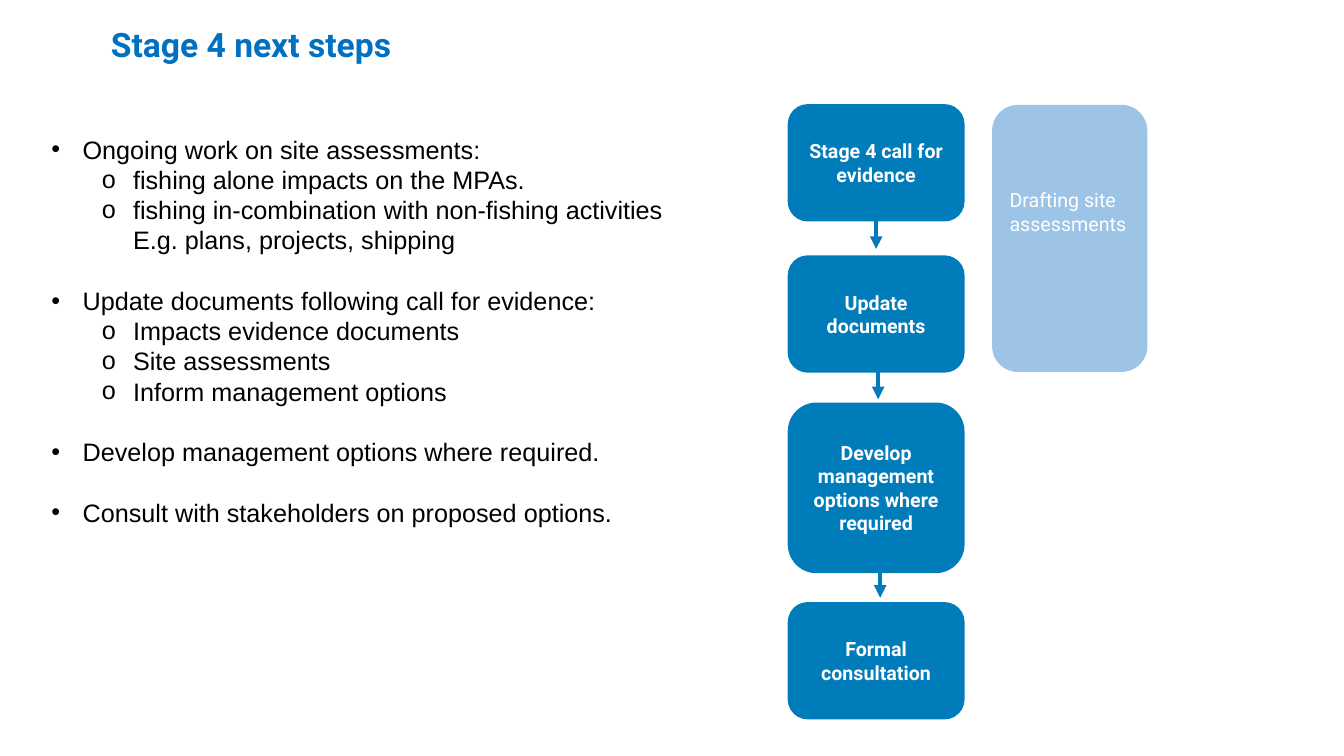
"""Build the slide on the next steps of Stage 4."""
from lxml import etree
from pptx import Presentation
from pptx import util as u
from pptx.dml.color import RGBColor
from pptx.enum import shapes, text
from pptx.oxml import ns

TITLE_BLUE = RGBColor(0x00, 0x70, 0xC0)
STEP_BLUE = RGBColor(0x00, 0x7C, 0xBA)
PALE_BLUE = RGBColor(0x9D, 0xC3, 0xE6)
WHITE = RGBColor(0xFF, 0xFF, 0xFF)
BLACK = RGBColor(0x00, 0x00, 0x00)

LINE_HEIGHT = u.Pt(21.6)
STEP_LEFT, STEP_WIDTH = 7.82, 1.74
ARROW_LENGTH = 0.28

BULLETS = [
    ("Ongoing work on site assessments:", [
        "fishing alone impacts on the MPAs.",
        "fishing in-combination with non-fishing activities\vE.g. plans, projects, shipping",
    ]),
    ("Update documents following call for evidence:", [
        "Impacts evidence documents",
        "Site assessments",
        "Inform management options",
    ]),
    ("Develop management options where required.", []),
    ("Consult with stakeholders on proposed options.", []),
]
STEPS = [
    ("Stage 4 call for evidence", 1.04, 1.15),
    ("Update documents", 2.54, 1.15),
    ("Develop management options where required", 4, 1.68),
    ("Formal consultation", 5.98, 1.15),
]
ARROWS = [(8.69, 2.19), (8.71, 3.68), (8.73, 5.65)]


def place(shape, left, top, width, height):
    """Move and size a shape, in inches."""
    shape.left, shape.top = u.Inches(left), u.Inches(top)
    shape.width, shape.height = u.Inches(width), u.Inches(height)


def style_font(font, name, size, color, bold=False):
    """Set the look of a font."""
    font.name, font.size, font.bold = name, u.Pt(size), bold
    font.color.rgb = color


def fill_title(title):
    """Write the heading in the title placeholder."""
    place(title, 1, 0.19, 12.33, 0.5)
    frame = title.text_frame
    frame.text = "Stage 4 next steps"
    frame.auto_size = text.MSO_AUTO_SIZE.NONE
    frame.vertical_anchor = text.MSO_ANCHOR.TOP
    para = frame.paragraphs[0]
    para.alignment = text.PP_ALIGN.LEFT
    style_font(para.runs[0].font, "Roboto", 24, TITLE_BLUE, True)


def format_bullet(para, wording, level, gap):
    """Write one list item with its bullet, indent and space before."""
    para.text = wording
    para.level = level
    properties = para._p.get_or_add_pPr()
    properties.set("marL", str(u.Inches(0.31 + 0.5 * level)))
    properties.set("indent", str(u.Inches(-0.31)))
    etree.SubElement(properties, ns.qn("a:buFont"), typeface="Arial")
    etree.SubElement(properties, ns.qn("a:buChar"), char="•o"[level])
    para.line_spacing = LINE_HEIGHT
    para.space_before = gap
    for span in para.runs:
        style_font(span.font, "Arial", 18, BLACK)


def fill_list(body):
    """Write the two-level list in the body placeholder."""
    place(body, 0.41, 1.28, 6.56, 4.64)
    frame = body.text_frame
    frame.auto_size = text.MSO_AUTO_SIZE.NONE
    frame.vertical_anchor = text.MSO_ANCHOR.TOP
    for index, (heading, details) in enumerate(BULLETS):
        para = frame.add_paragraph() if index else frame.paragraphs[0]
        format_bullet(para, heading, 0, LINE_HEIGHT if index else u.Pt(0))
        for detail in details:
            format_bullet(frame.add_paragraph(), detail, 1, u.Pt(0))


def add_box(page, wording, bounds, color, bold, align):
    """Add a rounded box with white text and return it."""
    box = page.shapes.add_shape(
        shapes.MSO_SHAPE.ROUNDED_RECTANGLE, *map(u.Inches, bounds))
    box.shadow.inherit = False
    box.fill.solid()
    box.fill.fore_color.rgb = color
    box.line.color.rgb = color
    box.line.width = u.Pt(1)
    frame = box.text_frame
    frame.word_wrap = True
    frame.text = wording
    frame.vertical_anchor = text.MSO_ANCHOR.MIDDLE
    para = frame.paragraphs[0]
    para.alignment = align
    style_font(para.runs[0].font, "Roboto", 14, WHITE, bold)
    return box


def add_arrow(page, x, top):
    """Add a short downward arrow between two steps."""
    arrow = page.shapes.add_connector(
        shapes.MSO_CONNECTOR.STRAIGHT,
        *map(u.Inches, (x, top, x, top + ARROW_LENGTH)))
    arrow.line.color.rgb = STEP_BLUE
    arrow.line.width = u.Pt(3)
    etree.SubElement(arrow.line._get_or_add_ln(), ns.qn("a:tailEnd"), type="triangle")
    etree.SubElement(arrow._element.spPr, ns.qn("a:effectLst"))


def main():
    """Build and save the deck."""
    deck = Presentation()
    deck.slide_width, deck.slide_height = u.Inches(13.33), u.Inches(7.5)
    page = deck.slides.add_slide(deck.slide_layouts[1])
    fill_title(page.shapes.title)
    fill_list(page.placeholders[1])
    for wording, top, height in STEPS:
        add_box(page, wording, (STEP_LEFT, top, STEP_WIDTH, height),
                STEP_BLUE, True, text.PP_ALIGN.CENTER)
    drafting = add_box(page, "Drafting site assessments", (9.84, 1.04, 1.54, 2.65),
                       PALE_BLUE, False, text.PP_ALIGN.LEFT)
    drafting.line.fill.background()
    drafting.text_frame.vertical_anchor = text.MSO_ANCHOR.TOP
    drafting.text_frame.margin_top = u.Inches(0.75)
    for x, top in ARROWS:
        add_arrow(page, x, top)
    deck.save("out.pptx")


if __name__ == "__main__":
    main()
